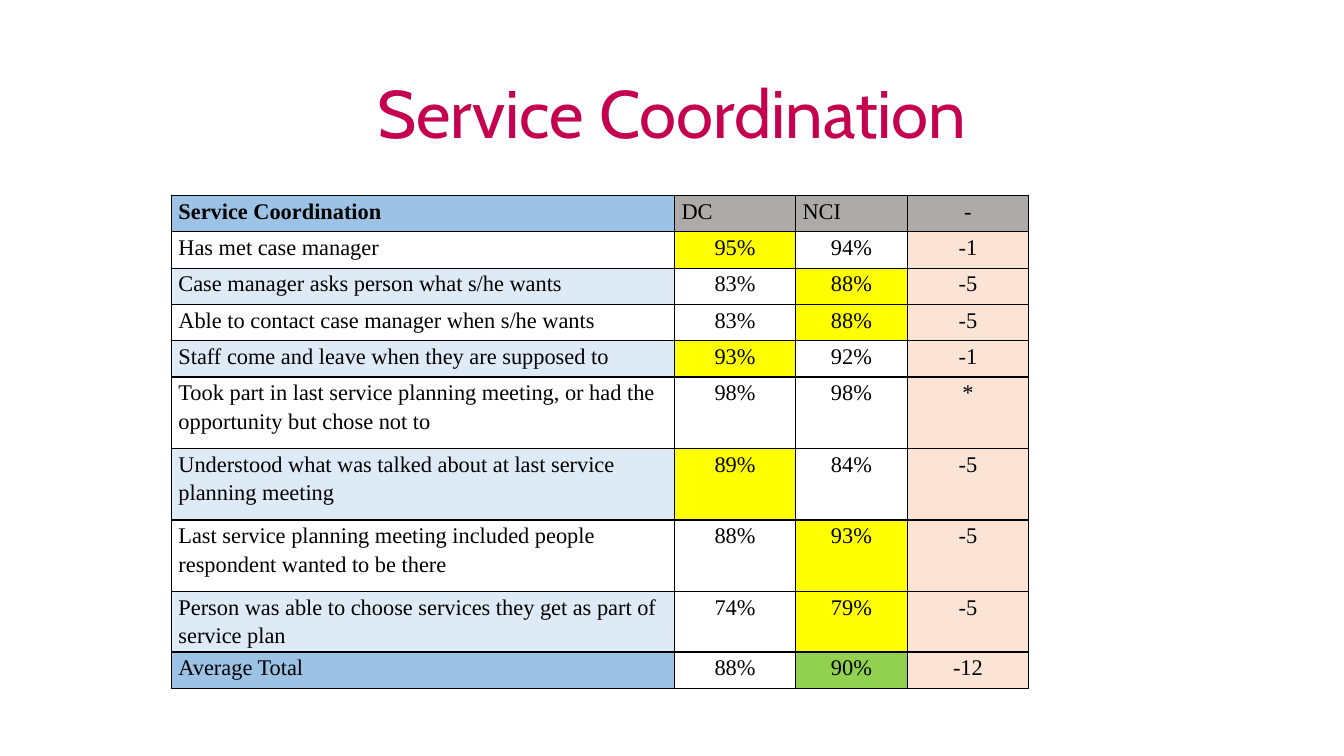
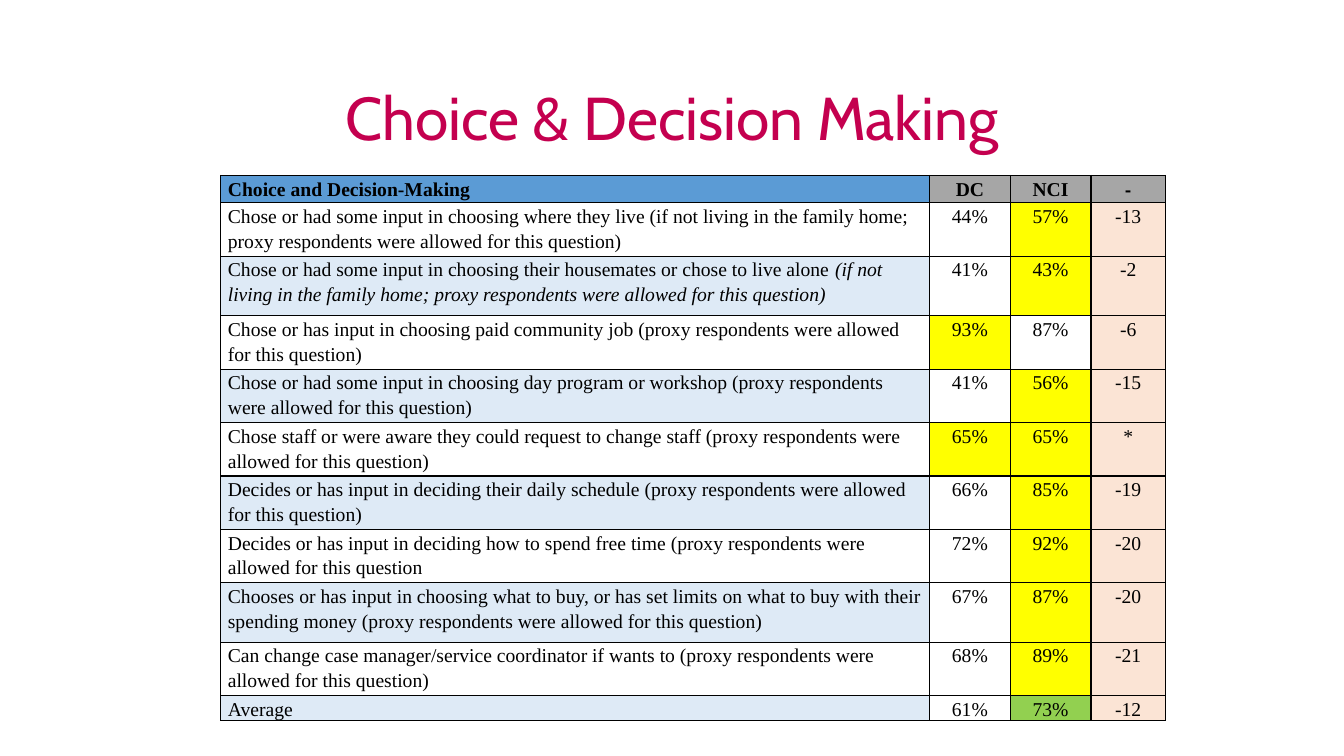
from dataclasses import dataclass

from lxml.etree import SubElement
from pptx import Presentation
from pptx.dml.color import RGBColor
from pptx.enum.text import MSO_ANCHOR as Anchor, MSO_AUTO_SIZE as AutoSize, PP_ALIGN as Align
from pptx.oxml.ns import qn
from pptx.util import Emu, Pt

EMU_PER_PX = 9144  # 100 px to the inch
TITLE_ONLY = 5
TITLE_FONT = "Cabin"
TABLE_FONT = "Times New Roman"
COLORS = {
    "title": "C4004F",
    "text": "000000",
    "plain": "FFFFFF",
    "band": "DEEAF6",
    "leader": "FFFF00",
    "best_average": "92D050",
    "difference": "FBE4D5",
    "blue": "9CC2E5",
    "strong_blue": "5B9BD5",
    "warm_gray": "AEAAAA",
    "gray": "A6A6A6",
}


@dataclass(frozen=True)
class Row:
    label: str
    dc: int
    nci: int
    difference: str
    height: int
    italic_label: str = ""


@dataclass(frozen=True)
class Survey:
    title: str
    title_size: float
    title_height: int
    left: int
    top: int
    column_widths: list[int]
    text_size: int
    heading: str
    heading_height: int
    heading_fill: str
    group_fill: str
    average_fill: str
    groups_bold: bool
    group_align: Align
    dash_font: str
    highlight_ties: bool
    rows: list[Row]


@dataclass(frozen=True)
class CellStyle:
    fill: str
    size: int
    align: Align = Align.CENTER
    bold: bool = False
    font: str = TABLE_FONT


SURVEYS = [
    Survey(
        title="Service Coordination", title_size=48, title_height=102,
        left=170, top=194, column_widths=[499, 120, 111, 120], text_size=16,
        heading="Service Coordination", heading_height=36,
        heading_fill="blue", group_fill="warm_gray", average_fill="blue",
        groups_bold=False, group_align=Align.LEFT, dash_font=TABLE_FONT,
        highlight_ties=False,
        rows=[
            Row("Has met case manager", 95, 94, "-1", 36),
            Row("Case manager asks person what s/he wants", 83, 88, "-5", 36),
            Row("Able to contact case manager when s/he wants", 83, 88, "-5", 36),
            Row("Staff come and leave when they are supposed to", 93, 92, "-1", 36),
            Row("Took part in last service planning meeting, or had the "
                "opportunity but chose not to", 98, 98, "*", 71),
            Row("Understood what was talked about at last service "
                "planning meeting", 89, 84, "-5", 71),
            Row("Last service planning meeting included people "
                "respondent wanted to be there", 88, 93, "-5", 71),
            Row("Person was able to choose services they get as part of "
                "service plan", 74, 79, "-5", 60),
            Row("Average Total", 88, 90, "-12", 36),
        ],
    ),
    Survey(
        title="Choice & Decision Making", title_size=43.2, title_height=67,
        left=219, top=174, column_widths=[703, 80, 80, 74], text_size=14,
        heading="Choice and Decision-Making", heading_height=26,
        heading_fill="strong_blue", group_fill="gray", average_fill="band",
        groups_bold=True, group_align=Align.CENTER, dash_font="Calibri",
        highlight_ties=True,
        rows=[
            Row("Chose or had some input in choosing where they live (if not living in "
                "the family home; proxy respondents were allowed for this question)",
                44, 57, "-13", 53),
            Row("Chose or had some input in choosing their housemates or chose to live alone ",
                41, 43, "-2", 59,
                italic_label="(if not living in the family home; proxy respondents "
                             "were allowed for this question)"),
            Row("Chose or has input in choosing paid community job (proxy respondents "
                "were allowed for this question)", 93, 87, "-6", 53),
            Row("Chose or had some input in choosing day program or workshop (proxy "
                "respondents were allowed for this question)", 41, 56, "-15", 53),
            Row("Chose staff or were aware they could request to change staff (proxy "
                "respondents were allowed for this question)", 65, 65, "*", 53),
            Row("Decides or has input in deciding their daily schedule (proxy "
                "respondents were allowed for this question)", 66, 85, "-19", 53),
            Row("Decides or has input in deciding how to spend free time (proxy "
                "respondents were allowed for this question", 72, 92, "-20", 53),
            Row("Chooses or has input in choosing what to buy, or has set limits on what "
                "to buy with their spending money (proxy respondents were allowed for "
                "this question)", 67, 87, "-20", 59),
            Row("Can change case manager/service coordinator if wants to (proxy "
                "respondents were allowed for this question)", 68, 89, "-21", 53),
            Row("Average", 61, 73, "-12", 25),
        ],
    ),
]


def px(length: int) -> Emu:
    return Emu(length * EMU_PER_PX)


def color(name: str) -> RGBColor:
    return RGBColor.from_string(COLORS[name])


def clear_insets(target) -> None:
    target.margin_left = target.margin_right = 0
    target.margin_top = target.margin_bottom = 0


def add_title(slide, survey: Survey) -> None:
    title = slide.shapes.title
    title.left, title.top = px(133), px(83)
    title.width, title.height = px(1067), px(survey.title_height)
    text_frame = title.text_frame
    clear_insets(text_frame)
    text_frame.word_wrap = True
    text_frame.auto_size = AutoSize.NONE
    text_frame.vertical_anchor = Anchor.TOP
    text_frame.text = survey.title
    paragraph = text_frame.paragraphs[0]
    paragraph.alignment = Align.CENTER
    paragraph.line_spacing = Pt(49)
    font = paragraph.runs[0].font
    font.name, font.size = TITLE_FONT, Pt(survey.title_size)
    font.color.rgb = color("title")


def add_borders(cell) -> None:
    """Draw all four sides; the lines must come before the fill in the XML."""
    properties = cell._tc.get_or_add_tcPr()
    for index, side in enumerate(("lnL", "lnR", "lnT", "lnB")):
        line = SubElement(properties, qn(f"a:{side}"), w=str(Pt(1)))
        fill = SubElement(line, qn("a:solidFill"))
        SubElement(fill, qn("a:srgbClr"), val=COLORS["text"])
        properties.insert(index, line)


def write_cell(cell, text: str, style: CellStyle, italic_text: str = "") -> None:
    cell.fill.solid()
    cell.fill.fore_color.rgb = color(style.fill)
    clear_insets(cell)
    cell.margin_left = cell.margin_right = px(7)
    cell.vertical_anchor = Anchor.TOP
    add_borders(cell)
    cell.text_frame.text = text
    paragraph = cell.text_frame.paragraphs[0]
    paragraph.alignment = style.align
    paragraph.line_spacing = 1.15
    if italic_text:
        run = paragraph.add_run()
        run.text = italic_text
        run.font.italic = True
    for run in paragraph.runs:
        run.font.name, run.font.size = style.font, Pt(style.size)
        run.font.bold = style.bold
        run.font.color.rgb = color("text")


def score_fill(score: int, other: int, is_average: bool, highlight_ties: bool) -> str:
    if score > other or (score == other and highlight_ties):
        return "best_average" if is_average else "leader"
    return "plain"


def write_heading(table, survey: Survey) -> None:
    size = survey.text_size
    write_cell(table.cell(0, 0), survey.heading,
               CellStyle(survey.heading_fill, size, Align.LEFT, bold=True))
    groups = (
        ("DC", survey.group_align, TABLE_FONT),
        ("NCI", survey.group_align, TABLE_FONT),
        ("-", Align.CENTER, survey.dash_font),
    )
    for column, (text, align, font) in enumerate(groups, start=1):
        write_cell(table.cell(0, column), text,
                   CellStyle(survey.group_fill, size, align, survey.groups_bold, font))


def write_row(table, survey: Survey, number: int, row: Row) -> None:
    size = survey.text_size
    is_average = number == len(survey.rows)
    label_fill = "plain" if number % 2 else "band"
    if is_average:
        label_fill = survey.average_fill
    write_cell(table.cell(number, 0), row.label,
               CellStyle(label_fill, size, Align.LEFT), row.italic_label)
    for column, (score, other) in enumerate(((row.dc, row.nci), (row.nci, row.dc)), start=1):
        fill = score_fill(score, other, is_average, survey.highlight_ties)
        write_cell(table.cell(number, column), f"{score}%", CellStyle(fill, size))
    write_cell(table.cell(number, 3), row.difference, CellStyle("difference", size))


def add_survey_table(slide, survey: Survey) -> None:
    heights = [survey.heading_height, *(row.height for row in survey.rows)]
    widths = survey.column_widths
    table = slide.shapes.add_table(
        len(heights), len(widths), px(survey.left), px(survey.top),
        px(sum(widths)), px(sum(heights)),
    ).table
    table.first_row = table.horz_banding = False
    for column, width in zip(table.columns, widths):
        column.width = px(width)
    for table_row, height in zip(table.rows, heights):
        table_row.height = px(height)
    write_heading(table, survey)
    for number, row in enumerate(survey.rows, start=1):
        write_row(table, survey, number, row)


def main() -> None:
    presentation = Presentation()
    presentation.slide_width, presentation.slide_height = px(1333), px(750)
    for survey in SURVEYS:
        slide = presentation.slides.add_slide(presentation.slide_layouts[TITLE_ONLY])
        add_title(slide, survey)
        add_survey_table(slide, survey)
    presentation.save("out.pptx")


if __name__ == "__main__":
    main()
